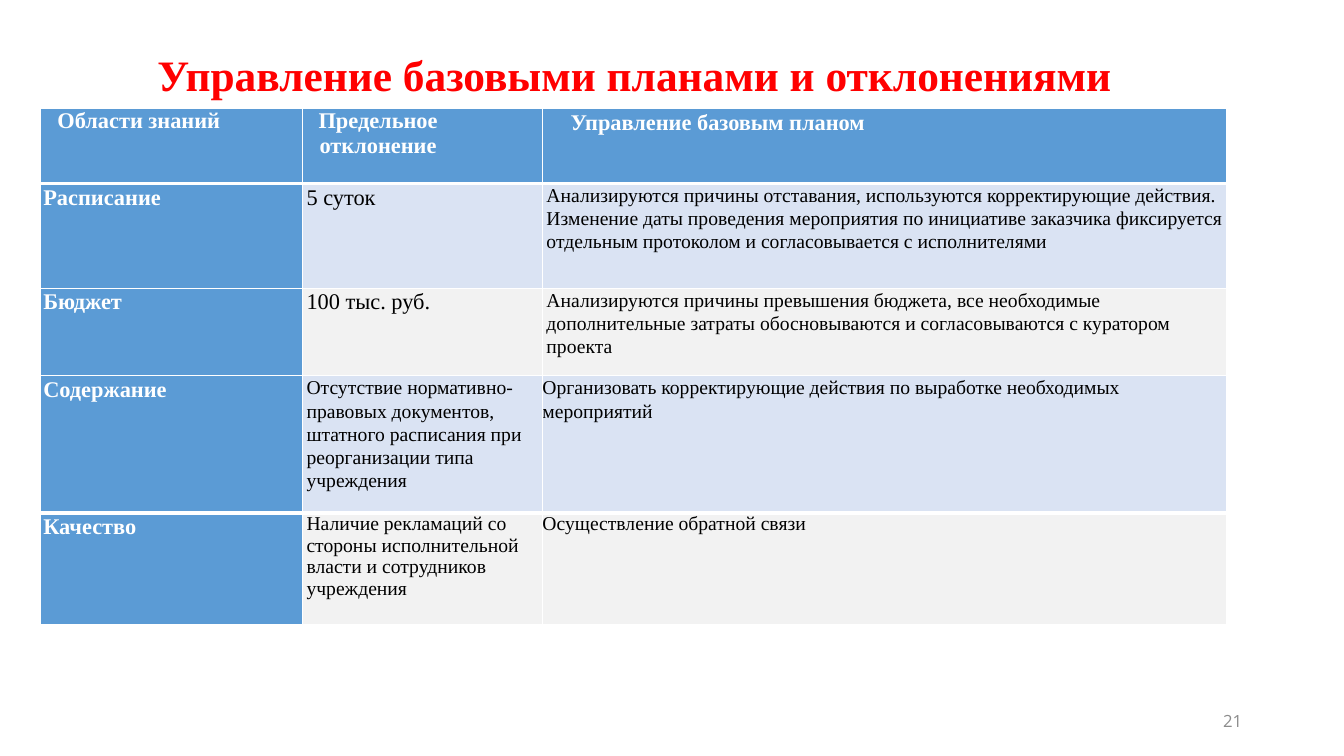
from lxml import etree
from pptx import Presentation
from pptx.dml.color import RGBColor
from pptx.enum.text import MSO_ANCHOR, PP_ALIGN
from pptx.oxml.ns import qn
from pptx.util import Inches, Pt

MIDDLE = MSO_ANCHOR.MIDDLE
CENTER, RIGHT = PP_ALIGN.CENTER, PP_ALIGN.RIGHT
SERIF = "Times New Roman"
COLORS = {
    "white": "FFFFFF", "black": "000000", "red": "FF0000", "gray": "8C8C8C",
    "blue": "5B9BD5", "pale": "DAE3F3", "light": "F2F2F2",
}


def style(para, size, color, bold=False, face=SERIF):
    for run in para.runs:
        run.font.name = face
        run.font.size = Pt(size)
        run.font.bold = bold
        run.font.color.rgb = RGBColor.from_string(COLORS[color])


def border(cell, sides):
    props = cell._tc.get_or_add_tcPr()
    for spot, (side, width) in enumerate(sides.items()):
        line = etree.Element(qn("a:ln" + side), w=str(Pt(width)))
        fill = etree.SubElement(line, qn("a:solidFill"))
        etree.SubElement(fill, qn("a:srgbClr"), val=COLORS["white"])
        props.insert(spot, line)


prs = Presentation()
prs.slide_width = Inches(13.33)
prs.slide_height = Inches(7.5)
slide = prs.slides.add_slide(prs.slide_layouts[6])

texts = [
    ("21", (9.42, 6.95, 3, 0.4), RIGHT, 1, (12, "gray", False, "Open Sans")),
    ("Управление базовыми планами и отклонениями", (0.54, 0.32, 11.5, 0.89),
     CENTER, 0.9, (31, "red", True, SERIF)),
]
for text, place, align, space, look in texts:
    frame = slide.shapes.add_textbox(*map(Inches, place)).text_frame
    frame.word_wrap = True
    frame.vertical_anchor = MIDDLE
    frame.text = text
    para = frame.paragraphs[0]
    para.alignment = align
    para.line_spacing = space
    style(para, *look)

rows = [
    ("Области знаний", "Предельное отклонение", "Управление базовым планом"),
    ("Расписание", "5 суток",
     "Анализируются причины отставания, используются корректирующие действия.\n"
     "Изменение даты проведения мероприятия по инициативе заказчика фиксируется "
     "отдельным протоколом и согласовывается с исполнителями"),
    ("Бюджет", "100 тыс. руб.",
     "Анализируются причины превышения бюджета, все необходимые дополнительные "
     "затраты обосновываются и согласовываются с куратором проекта"),
    ("Содержание",
     "Отсутствие нормативно-правовых документов, штатного расписания при "
     "реорганизации типа учреждения",
     "Организовать корректирующие действия по выработке необходимых мероприятий"),
    ("Качество",
     "Наличие рекламаций со стороны исполнительной власти и сотрудников учреждения",
     "Осуществление обратной связи"),
]
widths = [2.6, 2.38, 6.79]
heights = [0.74, 1.04, 0.87, 1.36, 1.11]
heads = [(0.22, -0.05), (0.17, -0.01), (0.28, 0)]
last = len(rows) - 1

table = slide.shapes.add_table(
    len(rows), len(widths), Inches(0.4), Inches(1.08),
    Inches(sum(widths)), Inches(sum(heights))).table
for col, width in zip(table.columns, widths):
    col.width = Inches(width)
for row, height in zip(table.rows, heights):
    row.height = Inches(height)

for r, row in enumerate(rows):
    for c, text in enumerate(row):
        cell = table.cell(r, c)
        cell.margin_left = cell.margin_right = 0
        cell.margin_top = cell.margin_bottom = 0
        label = r == 0 or c == 0
        shade = "blue" if label else "pale" if r % 2 else "light"
        cell.fill.solid()
        cell.fill.fore_color.rgb = RGBColor.from_string(COLORS[shade])
        border(cell, {"L": 1, "R": 1, "T": 3 if r == last else 1,
                      "B": 3 if r in (0, last - 1) else 1})

        if r == 0:
            left, first = heads[c]
        else:
            left, first = (0.03, 0.04, 0.04 if r < 3 else 0)[c], 0
        tight = (r == 0 and c < 2) or (r == last and c > 0)
        size = 16 if label or (c == 1 and r < 3) else 14
        cell.text_frame.text = text
        for para in cell.text_frame.paragraphs:
            props = para._p.get_or_add_pPr()
            props.set("marL", str(Inches(left)))
            props.set("indent", str(Inches(first)))
            para.line_spacing = 1 if tight else 1.07
            style(para, size, "white" if label else "black", label)

prs.save("out.pptx")
